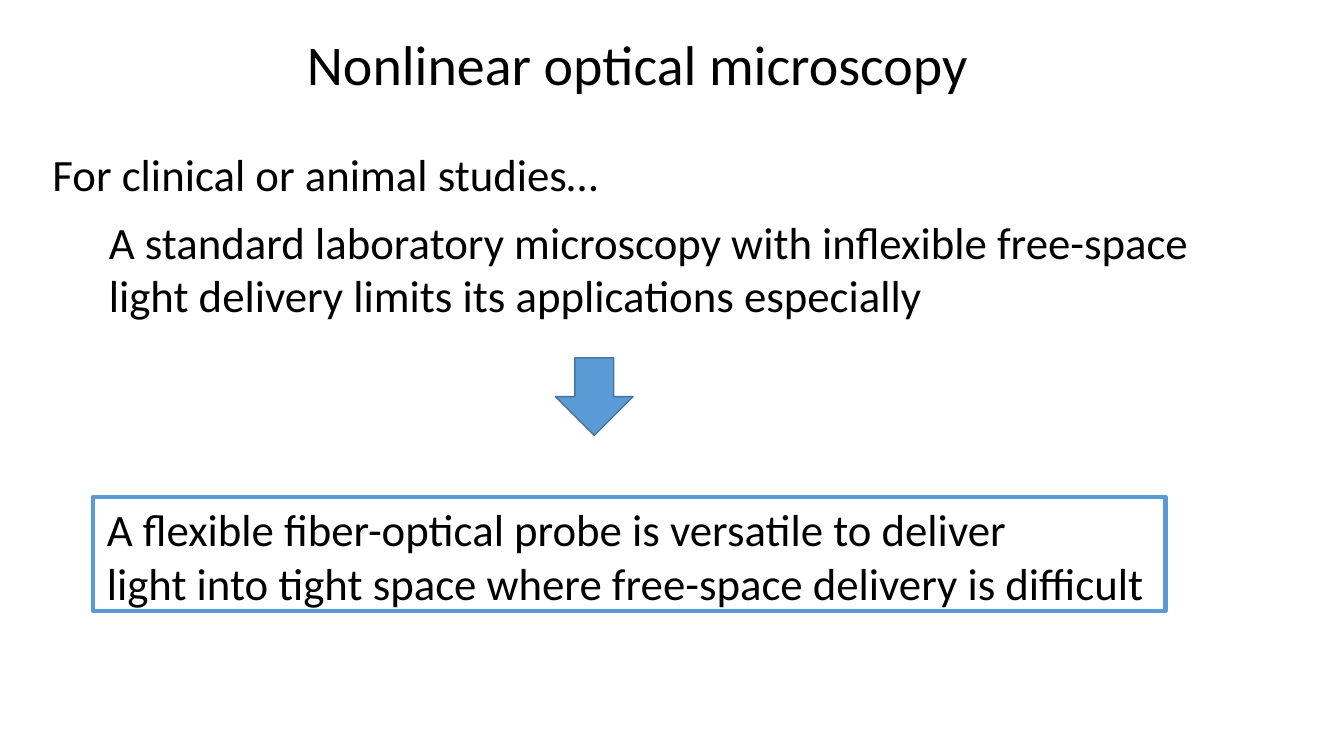
from lxml.etree import SubElement
from pptx import Presentation
from pptx.dml.color import RGBColor
from pptx.enum.shapes import MSO_SHAPE
from pptx.enum.text import MSO_ANCHOR, MSO_AUTO_SIZE, PP_ALIGN
from pptx.oxml.ns import qn
from pptx.util import Inches, Pt

WIDTH, HEIGHT = 13.33, 7.5
BLUE, DARK_BLUE, BLACK = "5B9BD5", "43739E", "000000"


def color(value):
    return RGBColor.from_string(value)


def place(shape, left, top, width, height):
    shape.left, shape.top = Inches(left), Inches(top)
    shape.width, shape.height = Inches(width), Inches(height)


def write(shape, lines, size, align=PP_ALIGN.LEFT, space=0, inset=0.1):
    frame = shape.text_frame
    frame.text = "\n".join(lines)
    frame.word_wrap = True
    frame.auto_size = MSO_AUTO_SIZE.NONE
    frame.vertical_anchor = MSO_ANCHOR.TOP
    frame.margin_left, frame.margin_right = Inches(inset), Inches(0.1)
    frame.margin_top = frame.margin_bottom = Inches(0.05)
    for index, paragraph in enumerate(frame.paragraphs):
        paragraph.alignment = align
        paragraph.space_before = Pt(space if index else 0)
        paragraph.font.name = "Calibri"
        paragraph.font.size = Pt(size)
        paragraph.font.color.rgb = color(BLACK)


def indent(paragraph, inches):
    properties = paragraph._p.get_or_add_pPr()
    properties.set("marL", str(Inches(inches)))
    properties.set("indent", "0")
    SubElement(properties, qn("a:buNone"))


def add_outlined(page, kind, bounds, line, weight, fill=None):
    shape = page.shapes.add_shape(kind, *map(Inches, bounds))
    shape.shadow.inherit = False
    if fill:
        shape.fill.solid()
        shape.fill.fore_color.rgb = color(fill)
    else:
        shape.fill.background()
    shape.line.color.rgb = color(line)
    shape.line.width = Pt(weight)
    return shape


def main():
    deck = Presentation()
    deck.slide_width, deck.slide_height = Inches(WIDTH), Inches(HEIGHT)
    page = deck.slides.add_slide(deck.slide_layouts[1])

    title, body = page.placeholders
    place(title, 1.04, 0.24, 10.56, 0.77)
    write(title, ["Nonlinear optical microscopy"], 40, PP_ALIGN.CENTER)

    place(body, 0.42, 1.41, 11.73, 1.85)
    write(body, [
        "For clinical or animal studies…",
        "A standard laboratory microscopy with inflexible free-space "
        "light delivery limits its applications especially",
    ], 32, space=9.5)
    for paragraph, inches in zip(body.text_frame.paragraphs, (0, 0.56)):
        indent(paragraph, inches)

    conclusion = add_outlined(page, MSO_SHAPE.RECTANGLE,
                              (0.92, 4.93, 10.64, 1.13), BLUE, 3)
    write(conclusion, [
        "A flexible fiber-optical probe is versatile to deliver",
        "light into tight space where free-space delivery is difficult",
    ], 32, inset=0.14)

    add_outlined(page, MSO_SHAPE.DOWN_ARROW,
                 (5.51, 3.55, 0.77, 0.77), DARK_BLUE, 1, BLUE)
    deck.save("out.pptx")


main()
